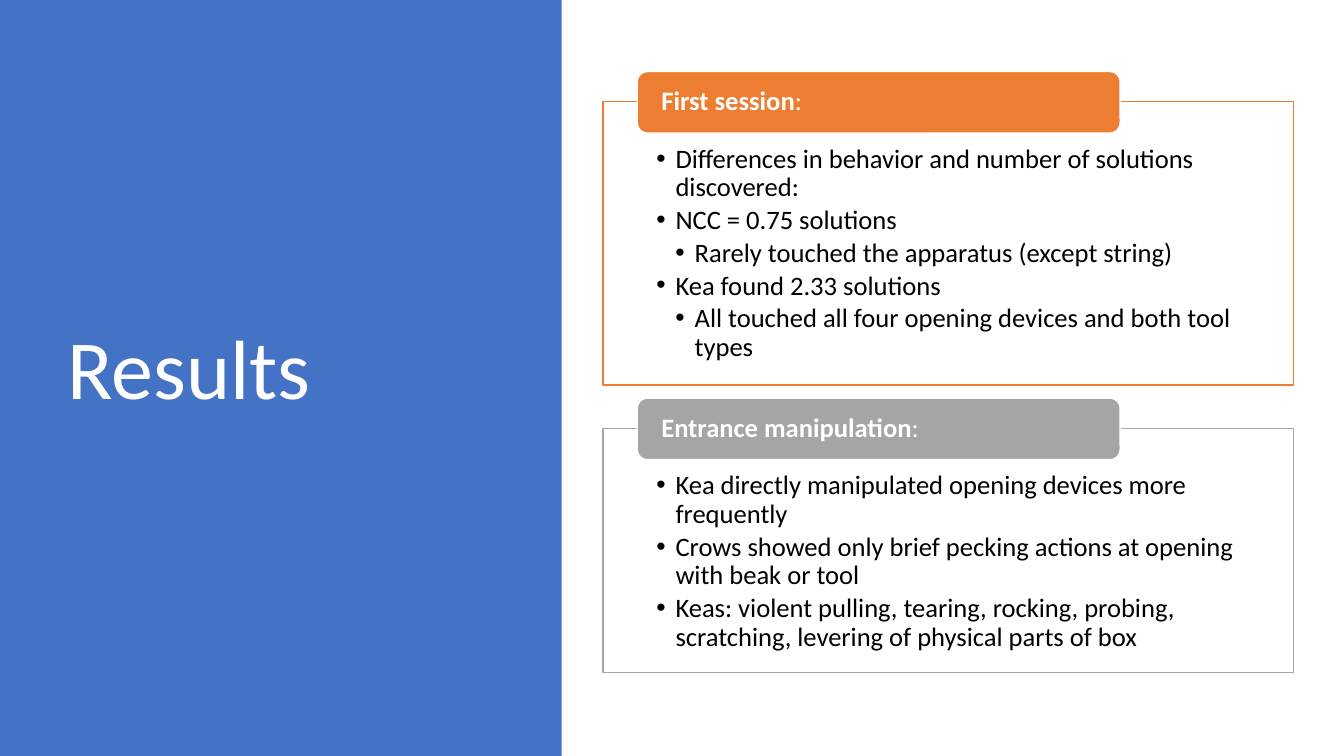
import lxml.etree
import pptx
import pptx.dml.color
import pptx.enum.shapes
import pptx.enum.text
import pptx.oxml.ns
import pptx.util

Inches = pptx.util.Inches
Points = pptx.util.Pt
Anchor = pptx.enum.text.MSO_ANCHOR
Shapes = pptx.enum.shapes.MSO_SHAPE
qualified = pptx.oxml.ns.qn

COLORS = {"blue": "4472C4", "orange": "ED7D31", "gray": "A5A5A5",
          "white": "FFFFFF", "black": "000000"}

SECTIONS = [
    {"heading": "First session", "color": "orange", "top": 1.01, "height": 2.81,
     "items": [
         (0, "Differences in behavior and number of solutions discovered:"),
         (0, "NCC = 0.75 solutions"),
         (1, "Rarely touched the apparatus (except string)"),
         (0, "Kea found 2.33 solutions"),
         (1, "All touched all four opening devices and both tool types")]},
    {"heading": "Entrance manipulation", "color": "gray", "top": 4.25, "height": 2.42,
     "items": [
         (0, "Kea directly manipulated opening devices more frequently"),
         (0, "Crows showed only brief pecking actions at opening with beak or tool"),
         (0, "Keas: violent pulling, tearing, rocking, probing, "
             "scratching, levering of physical parts of box")]},
]


class SlideBuilder:
    font = "Calibri"
    text_size = 19
    indent = 0.19

    def __init__(self, presentation, layout_index):
        self.slide = presentation.slides.add_slide(presentation.slide_layouts[layout_index])

    def color(self, name):
        return pptx.dml.color.RGBColor.from_string(COLORS[name])

    def place(self, shape, left, top, width, height):
        shape.left, shape.top = Inches(left), Inches(top)
        shape.width, shape.height = Inches(width), Inches(height)

    def paint(self, shape, fill, line=None):
        shape.fill.solid()
        shape.fill.fore_color.rgb = self.color(fill)
        if line:
            shape.line.color.rgb = self.color(line)
            shape.line.width = Points(1)
        else:
            shape.line.fill.background()

    def frame_text(self, shape, anchor, insets):
        frame = shape.text_frame
        frame.word_wrap = True
        frame.auto_size = pptx.enum.text.MSO_AUTO_SIZE.NONE
        frame.vertical_anchor = anchor
        (frame.margin_left, frame.margin_top,
         frame.margin_right, frame.margin_bottom) = map(Inches, insets)
        return frame

    def format_paragraph(self, paragraph, size, color, space_after=0):
        paragraph.alignment = pptx.enum.text.PP_ALIGN.LEFT
        paragraph.line_spacing = 0.9
        paragraph.space_before = Points(0)
        paragraph.space_after = Points(space_after)
        for run in paragraph.runs:
            run.font.name = self.font
            run.font.size = Points(size)
            run.font.color.rgb = self.color(color)

    def bullet(self, paragraph, level):
        paragraph.level = level
        properties = paragraph._p.get_or_add_pPr()
        properties.set("marL", str(Inches(self.indent * (level + 1))))
        properties.set("indent", str(Inches(-self.indent)))
        lxml.etree.SubElement(properties, qualified("a:buFont"), typeface="Arial")
        lxml.etree.SubElement(properties, qualified("a:buChar"), char="•")

    def panel(self, left, top, width, height, fill):
        """Add a plain rectangle behind everything else."""
        shape = self.slide.shapes.add_shape(
            Shapes.RECTANGLE, Inches(left), Inches(top), Inches(width), Inches(height))
        shape.shadow.inherit = False
        self.paint(shape, fill)
        self.slide.shapes._spTree.insert(2, shape._element)

    def title(self, text, left, top, width, height):
        shape = self.slide.shapes.title
        self.place(shape, left, top, width, height)
        frame = self.frame_text(shape, Anchor.MIDDLE, (0.1, 0.05, 0.1, 0.05))
        frame.text = text
        self.format_paragraph(frame.paragraphs[0], 60, "white")

    def bullet_box(self, placeholder, items, left, top, width, height, line):
        self.place(placeholder, left, top, width, height)
        self.paint(placeholder, "white", line)
        fill_color = placeholder._element.spPr.find(
            qualified("a:solidFill") + "/" + qualified("a:srgbClr"))
        lxml.etree.SubElement(fill_color, qualified("a:alpha"), val="90000")
        frame = self.frame_text(placeholder, Anchor.TOP, (0.53, 0.43, 0.53, 0.15))
        frame.text = "\n".join(text for _, text in items)
        for paragraph, (level, _) in zip(frame.paragraphs, items):
            self.format_paragraph(paragraph, self.text_size, "black", 0.15 * self.text_size)
            self.bullet(paragraph, level)

    def heading_tab(self, text, left, top, width, height, fill):
        shape = self.slide.shapes.add_shape(
            Shapes.ROUNDED_RECTANGLE, Inches(left), Inches(top), Inches(width), Inches(height))
        shape.shadow.inherit = False
        self.paint(shape, fill, "white")
        frame = self.frame_text(shape, Anchor.MIDDLE, (0.21, 0.03, 0.21, 0.03))
        paragraph = frame.paragraphs[0]
        for words, bold in ((text, True), (":", False)):
            run = paragraph.add_run()
            run.text = words
            run.font.bold = bold
        self.format_paragraph(paragraph, self.text_size, "white")


def main():
    presentation = pptx.Presentation()
    presentation.slide_width = Inches(13.33)
    presentation.slide_height = Inches(7.5)

    builder = SlideBuilder(presentation, layout_index=3)
    builder.panel(0, 0, 5.57, 7.5, "blue")
    builder.title("Results", 0.57, 0.68, 4.16, 6.02)
    for index, section in enumerate(SECTIONS, start=1):
        builder.bullet_box(builder.slide.placeholders[index], section["items"],
                           5.98, section["top"], 6.85, section["height"], section["color"])
        builder.heading_tab(section["heading"], 6.32, section["top"] - 0.3,
                            4.79, 0.61, section["color"])

    presentation.save("out.pptx")


if __name__ == "__main__":
    main()
